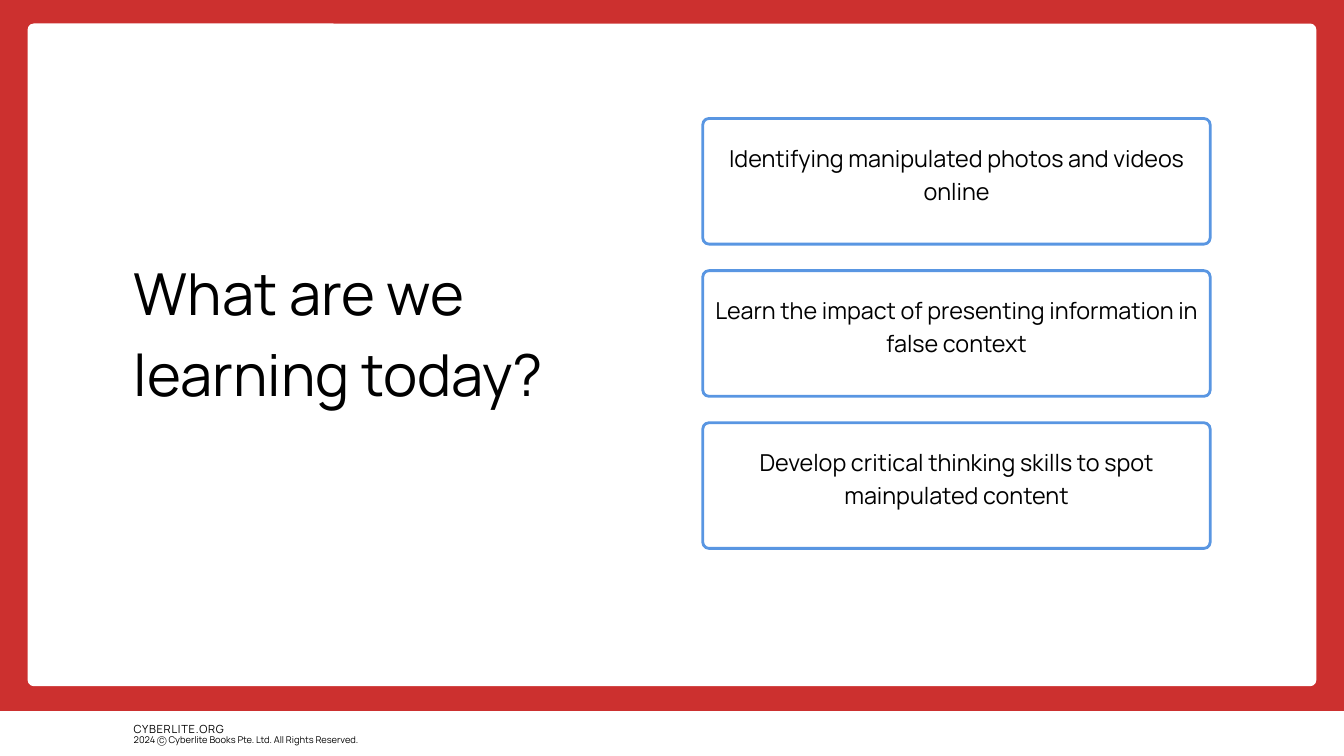
from pptx import Presentation
from pptx.dml.color import RGBColor
from pptx.enum.shapes import MSO_SHAPE
from pptx.enum.text import MSO_ANCHOR, PP_ALIGN
from pptx.util import Pt

COLORS = {"red": "CC302F", "white": "FFFFFF", "blue": "5996E2", "black": "000000"}
GOALS = [
    "Identifying manipulated photos and videos online",
    "Learn the impact of presenting information in false context",
    "Develop critical thinking skills to spot mainpulated content",
]


def rgb(name):
    return RGBColor.from_string(COLORS[name])


class SlideBuilder:
    font = "Manrope"
    radius = 6.6

    def __init__(self, slide):
        self.slide = slide

    def background(self, color):
        fill = self.slide.background.fill
        fill.solid()
        fill.fore_color.rgb = rgb(color)

    def panel(self, x, y, w, h, line=None, rounded=True):
        kind = MSO_SHAPE.ROUNDED_RECTANGLE if rounded else MSO_SHAPE.RECTANGLE
        sp = self.slide.shapes.add_shape(kind, Pt(x), Pt(y), Pt(w), Pt(h))
        sp.shadow.inherit = False
        if rounded:
            sp.adjustments[0] = self.radius / min(w, h)
        sp.fill.solid()
        sp.fill.fore_color.rgb = rgb("white")
        if line:
            sp.line.color.rgb = rgb(line)
            sp.line.width = Pt(3)
        else:
            sp.line.fill.background()

    def text(self, x, y, w, h, text, size, leading, inset=0, spacing=None,
             align=PP_ALIGN.LEFT, anchor=MSO_ANCHOR.TOP):
        sp = self.slide.shapes.add_textbox(Pt(x), Pt(y), Pt(w), Pt(h))
        tf = sp.text_frame
        frame_format = {"word_wrap": True, "vertical_anchor": anchor}
        for side in ("left", "top", "right", "bottom"):
            frame_format[f"margin_{side}"] = Pt(inset)
        for name, value in frame_format.items():
            setattr(tf, name, value)
        p = tf.paragraphs[0]
        for name, value in {"alignment": align, "line_spacing": Pt(leading)}.items():
            setattr(p, name, value)
        r = p.add_run()
        r.text = text
        for name, value in {"name": self.font, "size": Pt(size)}.items():
            setattr(r.font, name, value)
        r.font.color.rgb = rgb("black")
        if spacing:
            r.font._element.set("spc", str(round(spacing * 100)))


def main():
    prs = Presentation()
    prs.slide_width, prs.slide_height = Pt(1440), Pt(810)
    s = SlideBuilder(prs.slides.add_slide(prs.slide_layouts[6]))
    s.background("red")
    margin = 143.3

    # Footer
    s.panel(0, 762, 1440, 48, rounded=False)
    s.text(margin, 772, 133, 16.6, "CYBERLITE.ORG", 12, 16.8, spacing=0.8)
    s.text(margin, 784.8, 333, 13.7,
           "2024 Ⓒ Cyberlite Books Pte. Ltd. All Rights Reserved.", 10, 14)

    # White content area
    s.panel(29.6, 25.2, 1380.8, 710)

    # Learning goals
    x, top, w, h, pitch, rise = 753, 127, 543.6, 134.6, 163, 19.8
    for i, goal in enumerate(GOALS):
        y = top + i * pitch
        s.panel(x, y, w, h, line="blue")
        s.text(x, y - rise, w, h + rise, goal, 25, 35, inset=4,
               align=PP_ALIGN.CENTER, anchor=MSO_ANCHOR.MIDDLE)

    # Title
    s.text(margin, 263.5, 520, 173.5, "What are we learning today?", 62, 86.8)

    prs.save("out.pptx")


if __name__ == "__main__":
    main()
